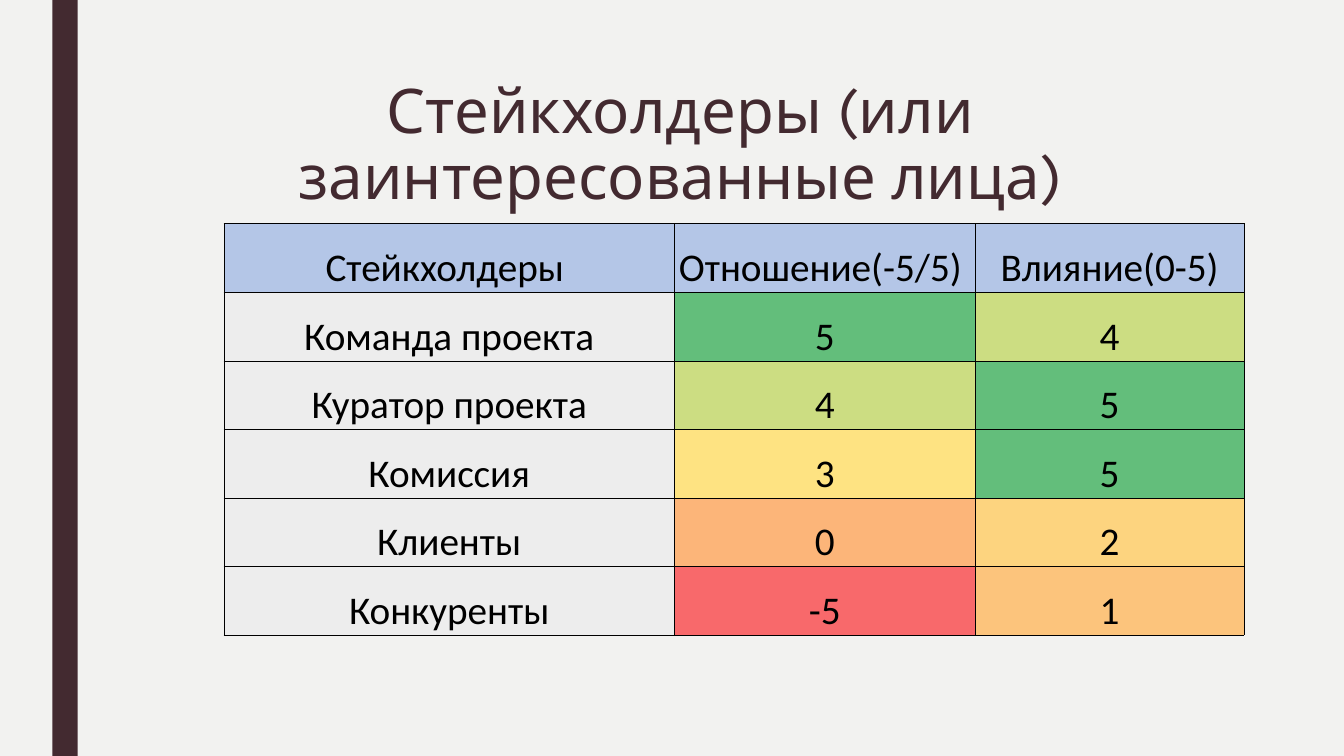
from typing import NamedTuple

from lxml import etree
from pptx import Presentation
from pptx.dml.color import RGBColor
from pptx.enum.shapes import MSO_SHAPE
from pptx.enum.text import MSO_ANCHOR, PP_ALIGN
from pptx.oxml.ns import qn
from pptx.util import Inches, Pt

RECT = MSO_SHAPE.RECTANGLE
TOP, BOTTOM = MSO_ANCHOR.TOP, MSO_ANCHOR.BOTTOM
CENTER = PP_ALIGN.CENTER

PLUM, BLACK, BACK = "432A30", "000000", "F2F2F0"
HEAD, NAME = "B4C6E7", "EDEDED"
# Score colours differ per column
STANCE = {5: "63BE7B", 4: "CCDD82", 3: "FEE382", 0: "FCB579", -5: "F8696B"}
POWER = {5: "63BE7B", 4: "CCDD82", 2: "FDD47F", 1: "FCC47C"}

WIDTHS = (4.47, 2.98, 2.67)
ROW = 0.68


class Holder(NamedTuple):
    name: str
    stance: int
    power: int


class Cell(NamedTuple):
    text: str
    fill: str


HEADS = ("Стейкхолдеры ", "Отношение(-5/5) ", "Влияние(0-5)")
HOLDERS = (
    Holder("Команда проекта", 5, 4),
    Holder("Куратор проекта", 4, 5),
    Holder("Комиссия", 3, 5),
    Holder("Клиенты", 0, 2),
    Holder("Конкуренты", -5, 1),
)


def paint(fill, color: str) -> None:
    fill.solid()
    fill.fore_color.rgb = RGBColor.from_string(color)


def write(frame, text: str, font: str, size: int, color: str) -> None:
    par = frame.paragraphs[0]
    par.alignment = CENTER
    run = par.add_run()
    run.text = text
    for key, value in {"name": font, "size": Pt(size)}.items():
        setattr(run.font, key, value)
    run.font.color.rgb = RGBColor.from_string(color)


def border(cell) -> None:
    props = cell._tc.get_or_add_tcPr()
    for index, side in enumerate(("a:lnL", "a:lnR", "a:lnT", "a:lnB")):
        line = etree.Element(qn(side), w=str(Pt(0.5)))
        solid = etree.SubElement(line, qn("a:solidFill"))
        etree.SubElement(solid, qn("a:srgbClr"), val=BLACK)
        props.insert(index, line)


def draw_cell(cell, item: Cell) -> None:
    form = {
        "vertical_anchor": BOTTOM,
        "margin_left": Inches(0.01),
        "margin_right": Inches(0.01),
        "margin_top": Inches(0.01),
        "margin_bottom": 0,
    }
    for key, value in form.items():
        setattr(cell, key, value)
    write(cell.text_frame, item.text, "Calibri", 28, BLACK)
    paint(cell.fill, item.fill)
    border(cell)


def draw_table(slide) -> None:
    rows = [[Cell(text, HEAD) for text in HEADS]]
    for man in HOLDERS:
        rows.append([
            Cell(man.name, NAME),
            Cell(str(man.stance), STANCE[man.stance]),
            Cell(str(man.power), POWER[man.power]),
        ])
    table = slide.shapes.add_table(
        len(rows), len(WIDTHS), Inches(2.22), Inches(2.22),
        Inches(sum(WIDTHS)), Inches(ROW * len(rows))).table
    for col, width in zip(table.columns, WIDTHS):
        col.width = Inches(width)
    for y, row in enumerate(rows):
        table.rows[y].height = Inches(ROW)
        for x, item in enumerate(row):
            draw_cell(table.cell(y, x), item)


def draw_title(slide) -> None:
    title = slide.shapes.title
    place = {"left": 1.5, "top": 0.75, "width": 10.5, "height": 1.62}
    for key, value in place.items():
        setattr(title, key, Inches(value))
    frame = title.text_frame
    frame.word_wrap = True
    frame.vertical_anchor = TOP
    write(frame, "Стейкхолдеры (или заинтересованные лица)", "Karla", 44, PLUM)
    frame.paragraphs[0].line_spacing = 0.89


def draw_bar(slide) -> None:
    bar = slide.shapes.add_shape(
        RECT, Inches(0.52), 0, Inches(0.25), Inches(7.5))
    bar.shadow.inherit = False
    paint(bar.fill, PLUM)
    bar.line.fill.background()


def main() -> None:
    deck = Presentation()
    deck.slide_width, deck.slide_height = Inches(13.33), Inches(7.5)
    slide = deck.slides.add_slide(deck.slide_layouts[5])
    paint(slide.background.fill, BACK)

    # Side bar, heading and score table
    draw_bar(slide)
    draw_title(slide)
    draw_table(slide)
    deck.save("out.pptx")


if __name__ == "__main__":
    main()
